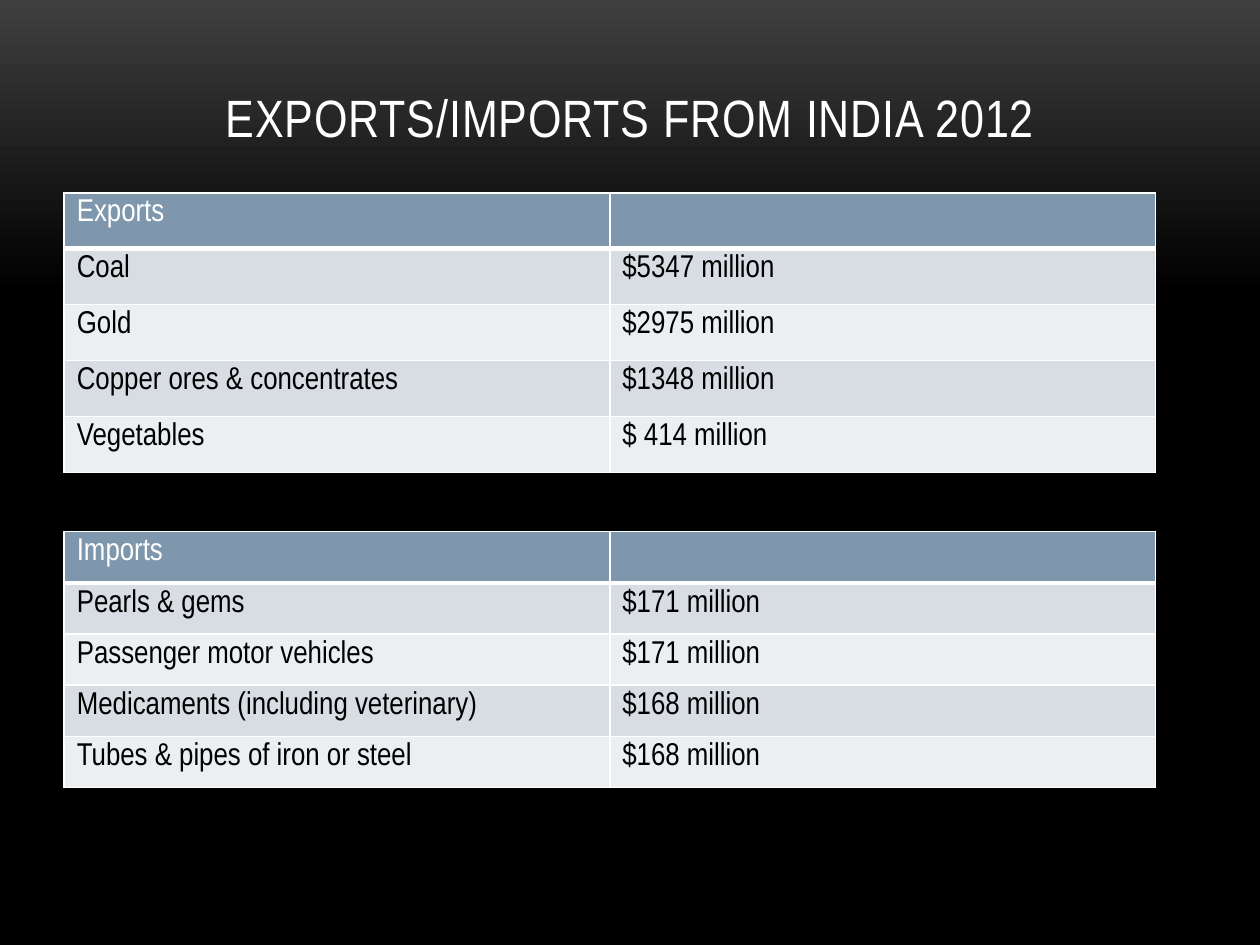
import copy
from dataclasses import dataclass

import lxml.etree
import pptx
import pptx.dml.color
import pptx.enum.dml
import pptx.enum.text
import pptx.oxml.ns
import pptx.util

RGBColor = pptx.dml.color.RGBColor
qn = pptx.oxml.ns.qn

WHITE = RGBColor(0xFF, 0xFF, 0xFF)
BLACK = RGBColor(0x00, 0x00, 0x00)
CHARCOAL = RGBColor(0x3F, 0x3F, 0x3F)
HEADER_BLUE = RGBColor(0x7E, 0x97, 0xAD)
BAND_COLORS = (RGBColor(0xEC, 0xEF, 0xF1), RGBColor(0xD8, 0xDD, 0xE3))

FONT_NAME = "Arial Narrow"
SLIDE_WIDTH = pptx.util.Inches(10)
SLIDE_HEIGHT = pptx.util.Inches(7.5)
TABLE_LEFT = pptx.util.Inches(0.51)
COLUMN_WIDTH = pptx.util.Inches(4.33)


@dataclass(frozen=True)
class TradeTable:
    heading: str
    top: float
    row_height: float
    goods: tuple[tuple[str, str], ...]


TRADE_TABLES = (
    TradeTable("Imports", 4.22, 0.406, (
        ("Pearls & gems", "$171 million"),
        ("Passenger motor vehicles", "$171 million"),
        ("Medicaments (including veterinary)", "$168 million"),
        ("Tubes & pipes of iron or steel", "$168 million"),
    )),
    TradeTable("Exports", 1.53, 0.444, (
        ("Coal", "$5347 million"),
        ("Gold", "$2975 million"),
        ("Copper ores & concentrates", "$1348 million"),
        ("Vegetables", "$ 414 million"),
    )),
)


def paint_background(page: pptx.slide.Slide) -> None:
    fill = page.background.fill
    fill.gradient()
    fill.gradient_angle = 270
    for stop, color, position in zip(fill.gradient_stops, (CHARCOAL, BLACK), (0, 0.31)):
        stop.color.rgb = color
        stop.position = position
    stop_list = next(page._element.iter(qn("a:gsLst")))
    last_stop = copy.deepcopy(stop_list[-1])
    last_stop.set("pos", "100000")
    stop_list.append(last_stop)


def set_font(para: pptx.text.text._Paragraph, size: float, color: RGBColor) -> None:
    para.font.name = FONT_NAME
    para.font.size = pptx.util.Pt(size)
    para.font.bold = False
    para.font.color.rgb = color


def write_title(page: pptx.slide.Slide, text: str) -> None:
    title = page.shapes.title
    title.left, title.top = pptx.util.Inches(0.67), pptx.util.Inches(0.3)
    title.width, title.height = pptx.util.Inches(8.67), pptx.util.Inches(1.25)
    frame = title.text_frame
    frame.text = text
    frame.vertical_anchor = pptx.enum.text.MSO_ANCHOR.MIDDLE
    para = frame.paragraphs[0]
    para.alignment = pptx.enum.text.PP_ALIGN.CENTER
    set_font(para, 30, WHITE)
    para.runs[0]._r.get_or_add_rPr().set("spc", "50")


def add_borders(cell: pptx.table._Cell, bottom_width: float) -> None:
    properties = cell._tc.get_or_add_tcPr()
    widths = (("a:lnL", 1), ("a:lnR", 1), ("a:lnT", 1), ("a:lnB", bottom_width))
    for index, (tag, width) in enumerate(widths):
        line = lxml.etree.Element(qn(tag), w=str(pptx.util.Pt(width)))
        paint = lxml.etree.SubElement(line, qn("a:solidFill"))
        lxml.etree.SubElement(paint, qn("a:srgbClr"), val=str(WHITE))
        properties.insert(index, line)


def draw_table(page: pptx.slide.Slide, trade: TradeTable) -> None:
    rows = ((trade.heading, ""), *trade.goods)
    row_height = pptx.util.Inches(trade.row_height)
    table = page.shapes.add_table(
        len(rows), 2, TABLE_LEFT, pptx.util.Inches(trade.top),
        2 * COLUMN_WIDTH, len(rows) * row_height,
    ).table
    for row_index, texts in enumerate(rows):
        is_header = row_index == 0
        for column_index, text in enumerate(texts):
            cell = table.cell(row_index, column_index)
            cell.text = text
            cell.fill.solid()
            cell.fill.fore_color.rgb = HEADER_BLUE if is_header else BAND_COLORS[row_index % 2]
            set_font(cell.text_frame.paragraphs[0], 18, WHITE if is_header else BLACK)
            add_borders(cell, 3 if is_header else 1)


def main() -> None:
    deck = pptx.Presentation()
    deck.slide_width, deck.slide_height = SLIDE_WIDTH, SLIDE_HEIGHT
    page = deck.slides.add_slide(deck.slide_layouts.get_by_name("Title Only"))
    paint_background(page)
    write_title(page, "EXPORTS/IMPORTS FROM INDIA 2012")
    for trade in TRADE_TABLES:
        draw_table(page, trade)
    deck.save("out.pptx")


if __name__ == "__main__":
    main()
